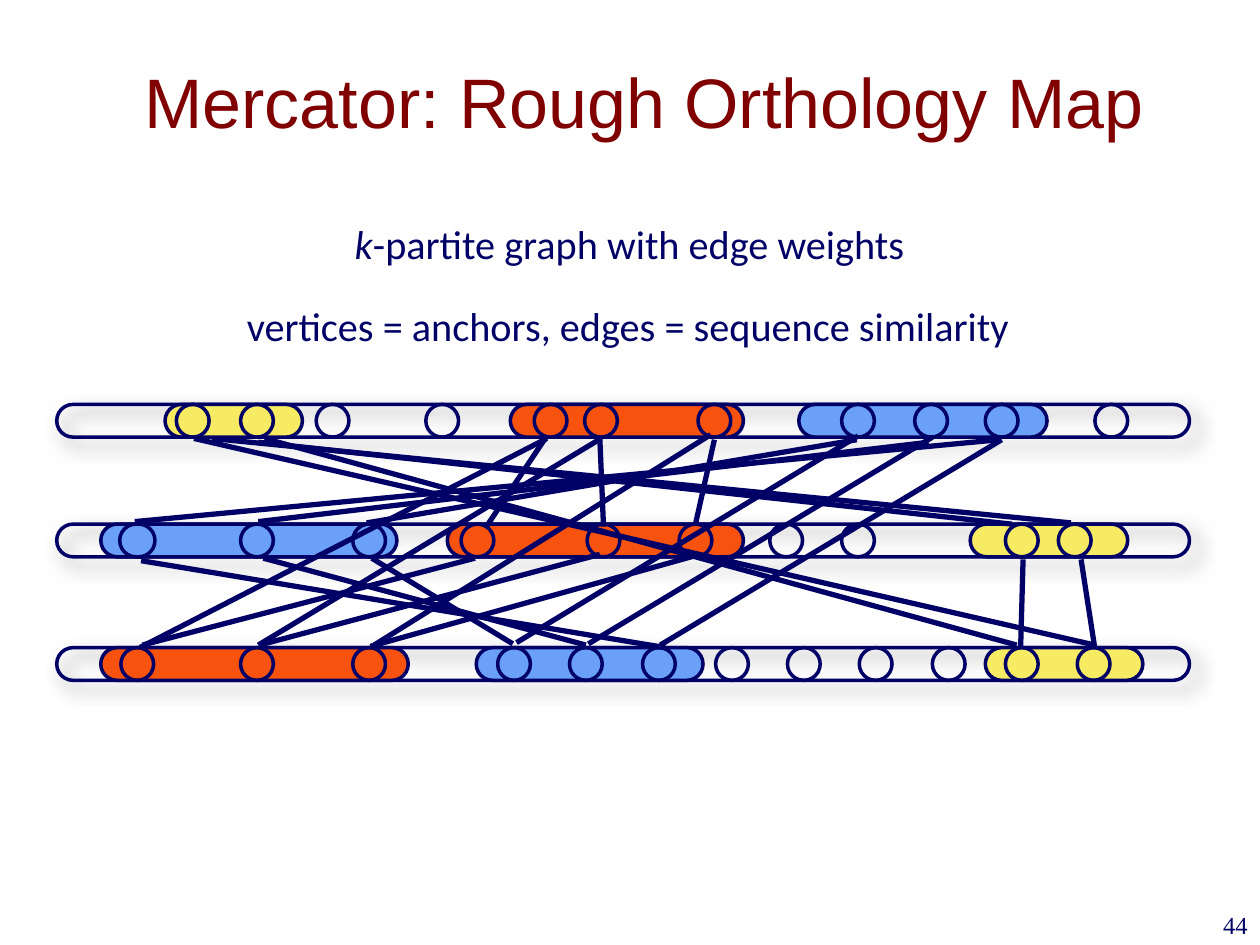
from typing import NamedTuple

from lxml.etree import SubElement
from pptx import Presentation
from pptx.dml.color import RGBColor
from pptx.enum.shapes import MSO_CONNECTOR, MSO_SHAPE
from pptx.enum.text import MSO_ANCHOR, PP_ALIGN
from pptx.oxml.ns import qn
from pptx.util import Inches, Pt

NAVY = RGBColor(0x00, 0x00, 0x66)
MAROON = RGBColor(0x80, 0x00, 0x00)
YELLOW = RGBColor(0xF7, 0xEB, 0x63)
BLUE = RGBColor(0x6A, 0xA0, 0xF7)
ORANGE = RGBColor(0xF7, 0x52, 0x0E)

TOP, MIDDLE, BOTTOM = 3.21, 4.16, 5.14
TRACK_LEFT, TRACK_WIDTH = 0.45, 8.99
BAND = 0.26


class Segment(NamedTuple):
    left: float
    track: float
    width: float
    color: RGBColor


class Edge(NamedTuple):
    x1: float
    y1: float
    x2: float
    y2: float


class Span(NamedTuple):
    text: str
    italic: bool = False


SEGMENTS = [
    Segment(1.31, TOP, 1.09, YELLOW),
    Segment(7.7, MIDDLE, 1.25, YELLOW),
    Segment(7.82, BOTTOM, 1.25, YELLOW),
    Segment(6.34, TOP, 1.97, BLUE),
    Segment(3.78, BOTTOM, 1.8, BLUE),
    Segment(0.8, MIDDLE, 2.35, BLUE),
    Segment(0.8, BOTTOM, 2.44, ORANGE),
    Segment(3.55, MIDDLE, 2.35, ORANGE),
    Segment(4.05, TOP, 1.85, ORANGE),
]

ANCHORS = {
    TOP: [1.4, 1.91, 2.51, 3.38, 4.24, 4.64, 5.54, 6.68, 7.26, 7.82, 8.69],
    MIDDLE: [1.91, 2.8, 3.66, 4.66, 5.39, 6.11, 6.68, 7.98, 8.4],
    BOTTOM: [0.96, 1.91, 2.8, 3.95, 4.52, 5.1, 5.68, 6.25, 6.82, 7.4, 7.98, 8.55],
}

EDGES = [
    # top to middle
    Edge(5.67, 3.49, 5.52, 4.16), Edge(4.76, 3.46, 4.79, 4.18),
    Edge(4.34, 3.46, 3.86, 4.18), Edge(2.05, 3.51, 8.03, 4.16),
    Edge(1.68, 3.48, 8.5, 4.15), Edge(7.37, 3.51, 2.05, 4.14),
    Edge(7.93, 3.49, 1.07, 4.14), Edge(6.8, 3.49, 2.91, 4.15),
    # middle to bottom
    Edge(5.28, 5.14, 1.12, 4.45), Edge(4.76, 4.4, 2.06, 5.12),
    Edge(4.07, 5.11, 2.95, 4.43), Edge(4.65, 5.12, 2.09, 4.43),
    Edge(3.77, 4.43, 1.13, 5.12), Edge(5.52, 4.41, 2.94, 5.13),
    Edge(8.12, 4.44, 8.1, 5.15), Edge(8.58, 4.44, 8.69, 5.15),
    # top to bottom
    Edge(7.4, 3.47, 4.67, 5.11), Edge(7.95, 3.49, 5.24, 5.12),
    Edge(6.81, 3.46, 4.1, 5.1), Edge(1.54, 3.48, 8.69, 5.12),
    Edge(8.07, 5.12, 2.1, 3.48), Edge(2.97, 5.12, 5.64, 3.45),
    Edge(4.77, 3.48, 2.05, 5.12), Edge(4.34, 3.48, 1.11, 5.14),
]


def add_outlined(page, kind: MSO_SHAPE, left: float, top: float, width: float,
                 color: RGBColor | None = None):
    shape = page.shapes.add_shape(kind, Inches(left), Inches(top), Inches(width), Inches(BAND))
    shape.shadow.inherit = False
    if kind == MSO_SHAPE.ROUNDED_RECTANGLE:
        shape.adjustments[0] = 0.5
    if color is None:
        shape.fill.background()
    else:
        shape.fill.solid()
        shape.fill.fore_color.rgb = color
    shape.line.color.rgb = NAVY
    shape.line.width = Pt(2)
    return shape


def add_soft_shadow(shape) -> None:
    effects = shape._element.spPr.find(qn("a:effectLst"))
    shadow = SubElement(effects, qn("a:outerShdw"), blurRad=str(Pt(10)), dist=str(Pt(6)),
                        dir=str(45 * 60000), algn="tl", rotWithShape="0")
    color = SubElement(shadow, qn("a:srgbClr"), val="808080")
    SubElement(color, qn("a:alpha"), val="75000")


def add_edge(page, edge: Edge) -> None:
    line = page.shapes.add_connector(MSO_CONNECTOR.STRAIGHT, *map(Inches, edge))
    line.line.color.rgb = NAVY
    line.line.width = Pt(3)
    SubElement(line._element.spPr, qn("a:effectLst"))


def write(frame, spans: list[Span], size: float, font: str, color: RGBColor,
          align: PP_ALIGN = PP_ALIGN.CENTER) -> None:
    frame.word_wrap = True
    para = frame.paragraphs[0]
    para.alignment = align
    for span in spans:
        run = para.add_run()
        run.text = span.text
        run.font.size = Pt(size)
        run.font.name = font
        run.font.italic = span.italic
        run.font.color.rgb = color


def add_caption(page, left: float, top: float, width: float, spans: list[Span]) -> None:
    box = page.shapes.add_textbox(Inches(left), Inches(top), Inches(width), Inches(0.45))
    frame = box.text_frame
    frame.margin_left = frame.margin_right = frame.margin_top = frame.margin_bottom = 0
    frame.vertical_anchor = MSO_ANCHOR.MIDDLE
    write(frame, spans, 23, "Calibri", NAVY)


def add_title(page, text: str) -> None:
    title = page.shapes.title
    title.left, title.top = Inches(0.83), Inches(0.17)
    title.width, title.height = Inches(8.5), Inches(1.25)
    frame = title.text_frame
    frame.vertical_anchor = MSO_ANCHOR.MIDDLE
    frame.margin_left, frame.margin_right = Inches(0.1), Inches(0.04)
    write(frame, [Span(text)], 40, "Arial", MAROON)


def main() -> None:
    deck = Presentation()
    deck.slide_width, deck.slide_height = Inches(10), Inches(7.5)
    page = deck.slides.add_slide(deck.slide_layouts[5])
    add_title(page, "Mercator: Rough Orthology Map")

    for track in ANCHORS:
        add_soft_shadow(add_outlined(page, MSO_SHAPE.ROUNDED_RECTANGLE,
                                     TRACK_LEFT, track, TRACK_WIDTH))
    for segment in SEGMENTS:
        add_outlined(page, MSO_SHAPE.ROUNDED_RECTANGLE, *segment)
    add_outlined(page, MSO_SHAPE.ROUNDED_RECTANGLE, 0.95, MIDDLE, 0.28)
    for track, lefts in ANCHORS.items():
        for left in lefts:
            add_outlined(page, MSO_SHAPE.OVAL, left, track, BAND)
    for edge in EDGES:
        add_edge(page, edge)

    add_caption(page, 2.59, 1.71, 4.82,
                [Span("k", italic=True), Span("-partite graph with edge weights")])
    add_caption(page, 1.56, 2.36, 6.86,
                [Span("vertices = anchors, edges = sequence similarity")])
    number = page.shapes.add_textbox(Inches(7.92), Inches(7.17), Inches(2.08), Inches(0.5))
    write(number.text_frame, [Span("44")], 14, "Times New Roman", NAVY, PP_ALIGN.RIGHT)
    deck.save("out.pptx")


if __name__ == "__main__":
    main()
